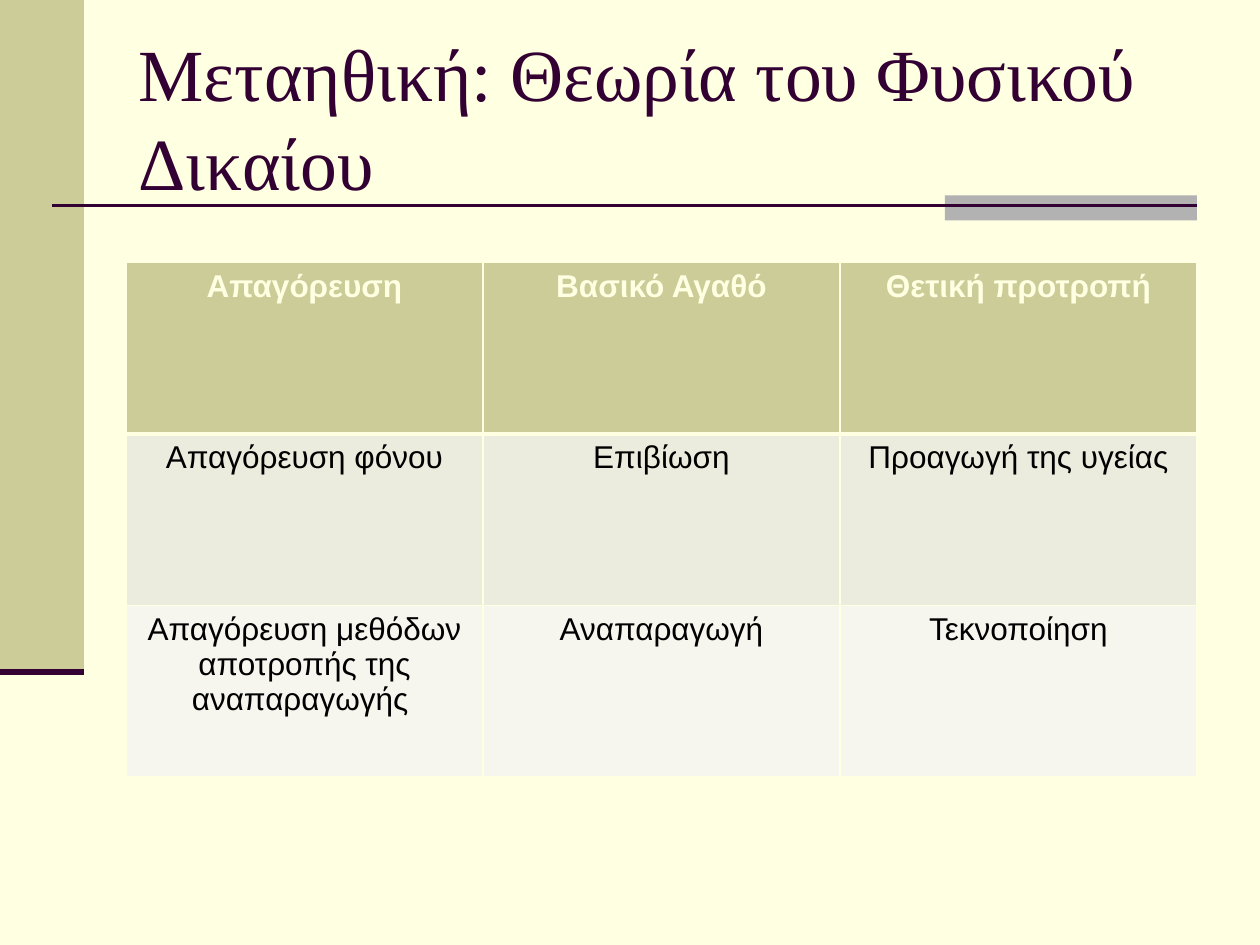
from pptx import Presentation
from pptx.dml.color import RGBColor
from pptx.enum.shapes import MSO_CONNECTOR as Connector, MSO_SHAPE as Shape
from pptx.enum.text import MSO_ANCHOR as Anchor, MSO_AUTO_SIZE as AutoSize, PP_ALIGN as Align
from pptx.oxml.xmlchemy import OxmlElement as Element
from pptx.util import Pt

CREAM, OLIVE, PLUM, GREY, BLACK = "FFFFE1", "CCCC99", "330033", "B2B2B2", "000000"
ROW_FILLS = [OLIVE, "ECECDE", "F6F6EF"]
ROWS = [
    ["Απαγόρευση", "Βασικό Αγαθό", "Θετική προτροπή"],
    ["Απαγόρευση φόνου", "Επιβίωση", "Προαγωγή της υγείας"],
    ["Απαγόρευση μεθόδων αποτροπής της αναπαραγωγής ", "Αναπαραγωγή", "Τεκνοποίηση"],
]


def paint(fill, color):
    fill.solid()
    fill.fore_color.rgb = RGBColor.from_string(color)


def format_font(font, name, size, color, bold=False):
    font.name, font.size, font.bold = name, Pt(size), bold
    font.color.rgb = RGBColor.from_string(color)


def add_bar(page, left, top, width, height, color):
    bar = page.shapes.add_shape(Shape.RECTANGLE, Pt(left), Pt(top), Pt(width), Pt(height))
    bar.shadow.inherit = False
    paint(bar.fill, color)
    bar.line.fill.background()


def add_rule(page, left, right, y, weight):
    rule = page.shapes.add_connector(Connector.STRAIGHT, Pt(left), Pt(y), Pt(right), Pt(y))
    rule.line.color.rgb = RGBColor.from_string(PLUM)
    rule.line.width = Pt(weight)
    rule._element.spPr.append(Element("a:effectLst"))


def set_title(page, text):
    title = page.shapes.title
    title.left, title.top, title.width, title.height = Pt(72), Pt(21.6), Pt(612), Pt(90)
    frame = title.text_frame
    frame.text = text
    frame.word_wrap = True
    frame.auto_size = AutoSize.NONE
    frame.vertical_anchor = Anchor.MIDDLE
    para = frame.paragraphs[0]
    para.alignment = Align.LEFT
    para.line_spacing = 1.0
    format_font(para.runs[0].font, "Times New Roman", 42, PLUM)


def add_border(cell, side, weight):
    border = Element(f"a:ln{side}")
    border.set("w", str(Pt(weight)))
    fill = Element("a:solidFill")
    color = Element("a:srgbClr")
    color.set("val", CREAM)
    fill.append(color)
    border.append(fill)
    cell._tc.get_or_add_tcPr().append(border)


def add_table(page):
    frame = page.shapes.add_table(len(ROWS), len(ROWS[0]), Pt(72), Pt(150), Pt(612), Pt(294))
    table = frame.table
    for index, texts in enumerate(ROWS):
        header = index == 0
        weights = {"L": 1, "R": 1, "T": 3 if index == 1 else 1, "B": 3 if header else 1}
        for column, text in enumerate(texts):
            cell = table.cell(index, column)
            cell.text = text
            for side, weight in weights.items():
                add_border(cell, side, weight)
            paint(cell.fill, ROW_FILLS[index])
            para = cell.text_frame.paragraphs[0]
            para.alignment = Align.CENTER
            format_font(para.runs[0].font, "Arial", 18, CREAM if header else BLACK, header)


def main():
    deck = Presentation()
    deck.slide_width, deck.slide_height = Pt(720), Pt(540)
    page = deck.slides.add_slide(deck.slide_layouts[5])
    paint(page.background.fill, CREAM)
    add_bar(page, 0, 0, 48, 384, OLIVE)
    add_bar(page, 540, 111.6, 144, 14.4, GREY)
    add_rule(page, 30, 684, 117.6, 1.5)
    add_rule(page, 0, 48, 384, 3.5)
    set_title(page, "Μεταηθική: Θεωρία του Φυσικού Δικαίου")
    add_table(page)
    deck.save("out.pptx")


if __name__ == "__main__":
    main()
